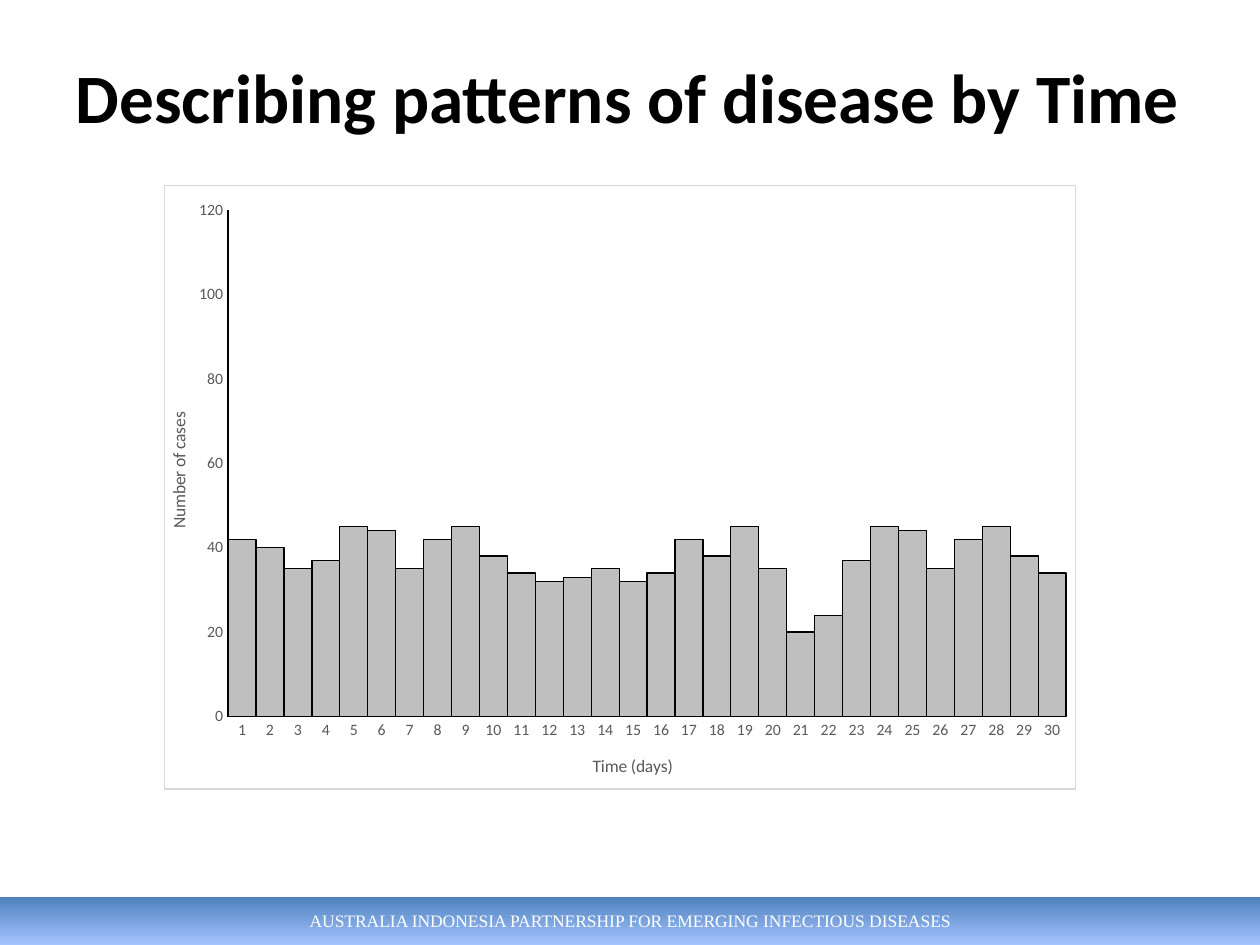
from dataclasses import dataclass

from lxml.etree import SubElement
from pptx import Presentation
from pptx.chart.data import CategoryChartData
from pptx.dml.color import RGBColor
from pptx.enum.chart import XL_CHART_TYPE, XL_TICK_MARK
from pptx.enum.shapes import MSO_SHAPE
from pptx.enum.text import MSO_ANCHOR, MSO_AUTO_SIZE, PP_ALIGN
from pptx.oxml import parse_xml
from pptx.oxml.ns import nsdecls, qn
from pptx.util import Cm, Pt

CASES = [42, 40, 35, 37, 45, 44, 35, 42, 45, 38, 34, 32, 33, 35, 32,
         34, 42, 38, 45, 35, 20, 24, 37, 45, 44, 35, 42, 45, 38, 34]
WIDTH, HEIGHT = 25.4, 19.05


@dataclass
class Theme:
    black: str = "000000"
    white: str = "FFFFFF"
    label: str = "595959"
    bar: str = "BFBFBF"
    border: str = "D9D9D9"
    footer_top: str = "4F81BD"
    footer_bottom: str = "A4C4FF"
    body_font: str = "Calibri"
    footer_font: str = "Times New Roman"
    title_size: float = 39.6
    text_size: float = 10
    tick_size: float = 9
    line_width: float = 0.75


class SlideBuilder:
    def __init__(self, slide, theme):
        self.s = slide
        self.t = theme

    def style_font(self, font, name, size, color, bold=False):
        font.name = name
        font.size = Pt(size)
        font.bold = bold
        font.color.rgb = RGBColor.from_string(color)

    def style_line(self, line):
        line.color.rgb = RGBColor.from_string(self.t.black)
        line.width = Pt(self.t.line_width)

    def set_text(self, tf, text, align, *style):
        tf.word_wrap = True
        tf.auto_size = MSO_AUTO_SIZE.NONE
        tf.vertical_anchor = MSO_ANCHOR.MIDDLE
        p = tf.paragraphs[0]
        p.alignment = align
        r = p.add_run()
        r.text = text
        self.style_font(r.font, *style)

    def title(self, text, left, top, width, height):
        sp = self.s.shapes.title
        sp.left, sp.top, sp.width, sp.height = map(Cm, (left, top, width, height))
        self.set_text(sp.text_frame, text, PP_ALIGN.LEFT, self.t.body_font,
                      self.t.title_size, self.t.black, True)

    def footer(self, text, height):
        sp = self.s.shapes.add_shape(MSO_SHAPE.RECTANGLE, 0, Cm(HEIGHT - height),
                                     Cm(WIDTH), Cm(height))
        sp.shadow.inherit = False
        sp.line.fill.background()
        sp.fill.gradient()
        sp.fill.gradient_angle = 270
        colors = (self.t.footer_top, self.t.footer_bottom)
        for stop, position, color in zip(sp.fill.gradient_stops, (0, 1), colors):
            stop.position = position
            stop.color.rgb = RGBColor.from_string(color)
        self.set_text(sp.text_frame, text, PP_ALIGN.CENTER, self.t.footer_font,
                      self.t.text_size, self.t.white)

    def axis(self, axis, title):
        axis.has_major_gridlines = False
        axis.major_tick_mark = XL_TICK_MARK.NONE
        axis.minor_tick_mark = XL_TICK_MARK.NONE
        self.style_line(axis.format.line)
        self.style_font(axis.tick_labels.font, self.t.body_font,
                        self.t.tick_size, self.t.label)
        r = axis.axis_title.text_frame.paragraphs[0].add_run()
        r.text = title
        self.style_font(r.font, self.t.body_font, self.t.text_size, self.t.label)

    def frame(self, chart):
        sp_pr = parse_xml(
            f'<c:spPr {nsdecls("c", "a")}>'
            f'<a:solidFill><a:srgbClr val="{self.t.white}"/></a:solidFill>'
            f'<a:ln w="{Pt(self.t.line_width)}"><a:solidFill>'
            f'<a:srgbClr val="{self.t.border}"/></a:solidFill></a:ln></c:spPr>')
        chart.element.find(qn("c:chart")).addnext(sp_pr)

    def plot_layout(self, chart, x, y, w, h):
        area = chart.element.find(qn("c:chart")).find(qn("c:plotArea"))
        for old in area.findall(qn("c:layout")):
            area.remove(old)
        layout = parse_xml(f'<c:layout {nsdecls("c")}><c:manualLayout/></c:layout>')
        settings = [("layoutTarget", "inner"), ("xMode", "edge"), ("yMode", "edge"),
                    ("x", x), ("y", y), ("w", w), ("h", h)]
        for tag, value in settings:
            SubElement(layout[0], qn(f"c:{tag}")).set("val", str(value))
        area.insert(0, layout)

    def histogram(self, values, left, top, width, height):
        data = CategoryChartData()
        data.categories = [str(day) for day in range(1, len(values) + 1)]
        data.add_series("Series 1", values)
        chart = self.s.shapes.add_chart(
            XL_CHART_TYPE.COLUMN_CLUSTERED,
            *map(Cm, (left, top, width, height)), data).chart
        chart.has_legend = False
        chart.has_title = False
        self.style_font(chart.font, self.t.body_font, self.t.text_size, self.t.black)
        self.axis(chart.category_axis, "Time (days)")
        self.axis(chart.value_axis, "Number of cases")
        chart.value_axis.minimum_scale = 0
        chart.value_axis.maximum_scale = 120
        chart.value_axis.major_unit = 20
        plot = chart.plots[0]
        plot.vary_by_categories = False
        plot.gap_width = 0
        plot.overlap = 100
        bars = plot.series[0].format
        bars.fill.solid()
        bars.fill.fore_color.rgb = RGBColor.from_string(self.t.bar)
        self.style_line(bars.line)
        self.frame(chart)
        self.plot_layout(chart, 0.07, 0.04, 0.92, 0.84)


def main():
    prs = Presentation()
    prs.slide_width, prs.slide_height = Cm(WIDTH), Cm(HEIGHT)
    s = prs.slides.add_slide(prs.slide_layouts[5])
    builder = SlideBuilder(s, Theme())
    builder.footer("AUSTRALIA INDONESIA PARTNERSHIP FOR EMERGING INFECTIOUS DISEASES", 0.97)
    builder.title("Describing patterns of disease by Time", 1.27, 0.76, 22.86, 2.36)
    builder.histogram(CASES, 3.3, 3.73, 18.39, 12.19)
    prs.save("out.pptx")


if __name__ == "__main__":
    main()
